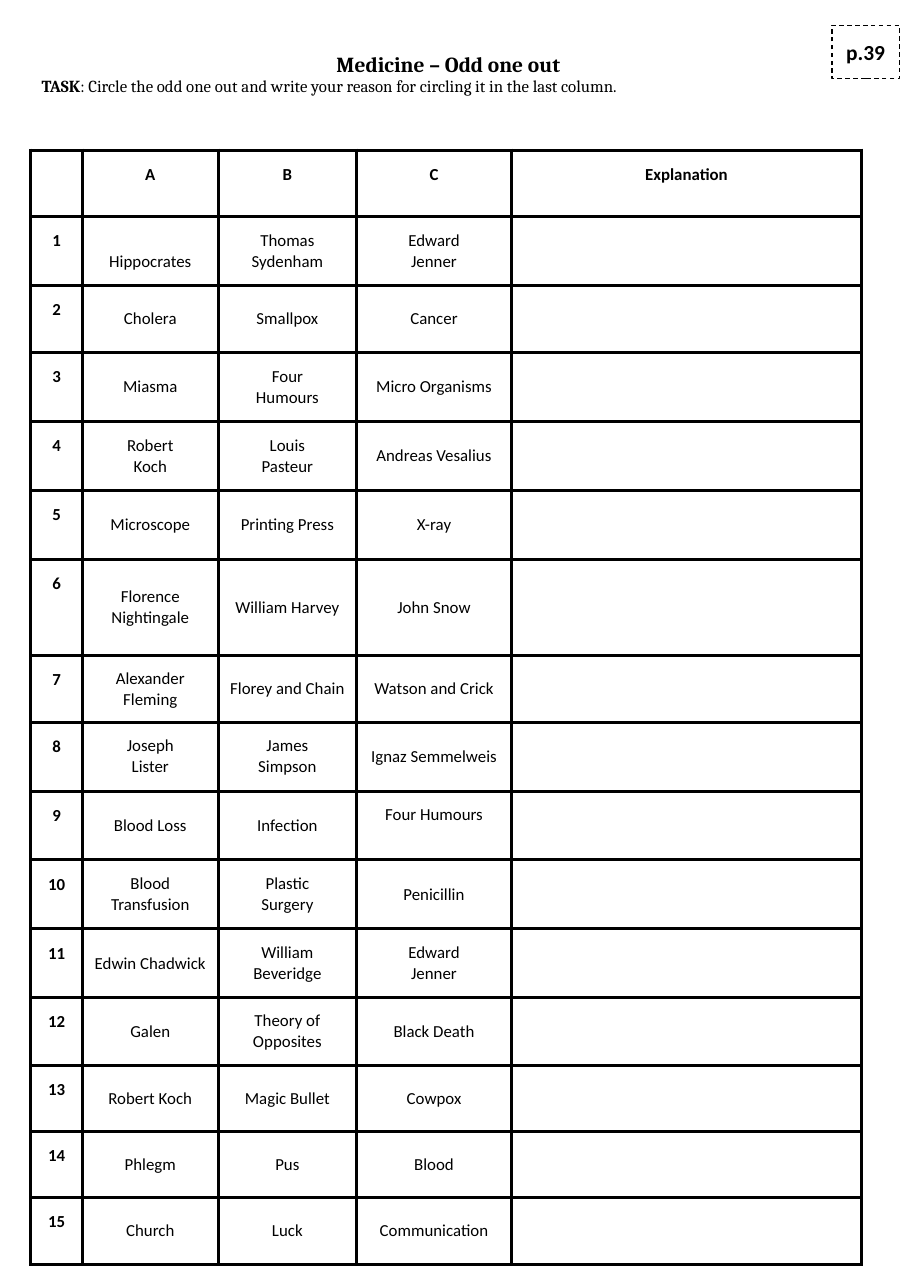
import dataclasses
import pptx
import pptx.dml.color
import pptx.enum.dml
import pptx.enum.shapes
import pptx.enum.text
import pptx.oxml
import pptx.oxml.ns
import pptx.util

Cm = pptx.util.Cm
Pt = pptx.util.Pt
Anchor = pptx.enum.text.MSO_ANCHOR
Align = pptx.enum.text.PP_ALIGN


@dataclasses.dataclass(frozen=True)
class Theme:
    ink: str = "000000"
    paper: str = "FFFFFF"
    serif: str = "Cambria"
    sans: str = "Calibri"
    large: int = 14
    small: int = 11
    border: float = 2.25
    dash: float = 0.75


theme = Theme()
ink = pptx.dml.color.RGBColor.from_string(theme.ink)
paper = pptx.dml.color.RGBColor.from_string(theme.paper)


def style(paras, face, size, bold, align):
    for para in paras:
        para.alignment = align
        for run in para.runs:
            run.font.name = face
            run.font.size = Pt(size)
            run.font.bold = bold
            run.font.color.rgb = ink


def inset(box, side, edge):
    box.margin_left = box.margin_right = Cm(side)
    box.margin_top = box.margin_bottom = Cm(edge)


deck = pptx.Presentation()
deck.slide_width, deck.slide_height = Cm(21), Cm(29.7)
slide = deck.slides.add_slide(deck.slide_layouts[6])

# Heading: a one-cell table with title and task line
banner = slide.shapes.add_table(1, 1, Cm(0.71), Cm(0.97), Cm(19.15), Cm(1.24)).table
banner.first_row = banner.horz_banding = False
head = banner.cell(0, 0)
head.fill.solid()
head.fill.fore_color.rgb = paper
inset(head, 0.25, 0.25)
head.text_frame.text = " Medicine – Odd one out\nTASK"
title, task = head.text_frame.paragraphs
rest = task.add_run()
rest.text = ": Circle the odd one out and write your reason for circling it in the last column."
style([title], theme.serif, theme.large, True, Align.CENTER)
style([task], theme.serif, theme.small, True, Align.LEFT)
rest.font.bold = False

# Table content: a line break starts a new paragraph
heads = ("", "A", "B", "C", "Explanation")
trios = (
    ("Hippocrates", "Thomas Sydenham", "Edward\nJenner"),
    ("Cholera", "Smallpox", "Cancer"),
    ("Miasma", "Four\nHumours", "Micro Organisms"),
    ("Robert\nKoch", "Louis\nPasteur", "Andreas Vesalius"),
    ("Microscope", "Printing Press", "X-ray"),
    ("Florence Nightingale", "William Harvey", "John Snow"),
    ("Alexander Fleming", "Florey and Chain", "Watson and Crick"),
    ("Joseph\nLister", "James\nSimpson", "Ignaz Semmelweis"),
    ("Blood Loss", "Infection", "Four Humours"),
    ("Blood Transfusion", "Plastic\nSurgery", "Penicillin"),
    ("Edwin Chadwick", "William Beveridge", "Edward\nJenner"),
    ("Galen", "Theory of Opposites", "Black Death"),
    ("Robert Koch", "Magic Bullet", "Cowpox"),
    ("Phlegm", "Pus", "Blood"),
    ("Church", "Luck", "Communication"),
)
rows = [heads] + [(str(n), *trio, "") for n, trio in enumerate(trios, 1)]
widths = (1.19, 3.13, 3.19, 3.57, 8.07)
short, usual, tall = 1.53, 1.59, 2.22
highs = {n: short for n in (0, 7, 13, 14, 15)} | {2: 1.55, 6: tall, 12: 1.55}
shifts = {(1, 1): Anchor.BOTTOM, (9, 3): Anchor.TOP}

# Table grid
grid = slide.shapes.add_table(
    len(rows), len(widths), Cm(0.71), Cm(3.46), Cm(19.15), Cm(25.7)).table
grid.first_row = grid.horz_banding = False
for col, width in zip(grid.columns, widths):
    col.width = Cm(width)

for r, row in enumerate(rows):
    grid.rows[r].height = Cm(highs.get(r, usual))
    for c, text in enumerate(row):
        cell = grid.cell(r, c)
        label = r == 0 or c == 0
        paras = cell.text_frame.paragraphs
        if text:
            cell.text_frame.text = text
            paras = cell.text_frame.paragraphs
            style(paras, theme.sans, theme.small, label, Align.CENTER)
        inset(cell, 0.19, 0.31 if (r, c) in shifts else 0.25)
        if label and text:
            paras[0].line_spacing = 1.15
            paras[0].space_before = Pt(12)
        cell.vertical_anchor = shifts.get((r, c), Anchor.TOP if label else Anchor.MIDDLE)
        for side in "LRTB":
            cell._tc.get_or_add_tcPr().append(pptx.oxml.parse_xml(
                f'<a:ln{side} {pptx.oxml.ns.nsdecls("a")} w="{Pt(theme.border)}">'
                f'<a:solidFill><a:srgbClr val="{theme.ink}"/></a:solidFill></a:ln{side}>'))
        cell.fill.background()

# Page badge
badge = slide.shapes.add_shape(
    pptx.enum.shapes.MSO_SHAPE.RECTANGLE, Cm(19.18), Cm(0.58), Cm(1.55), Cm(1.24))
badge.shadow.inherit = False
badge.fill.solid()
badge.fill.fore_color.rgb = paper
badge.line.color.rgb = ink
badge.line.width = Pt(theme.dash)
badge.line.dash_style = pptx.enum.dml.MSO_LINE.DASH
badge.text_frame.text = "p.39"
badge.text_frame.vertical_anchor = Anchor.MIDDLE
inset(badge.text_frame, 0.25, 0.25)
style(badge.text_frame.paragraphs, theme.sans, theme.large, True, Align.CENTER)

deck.save("out.pptx")
